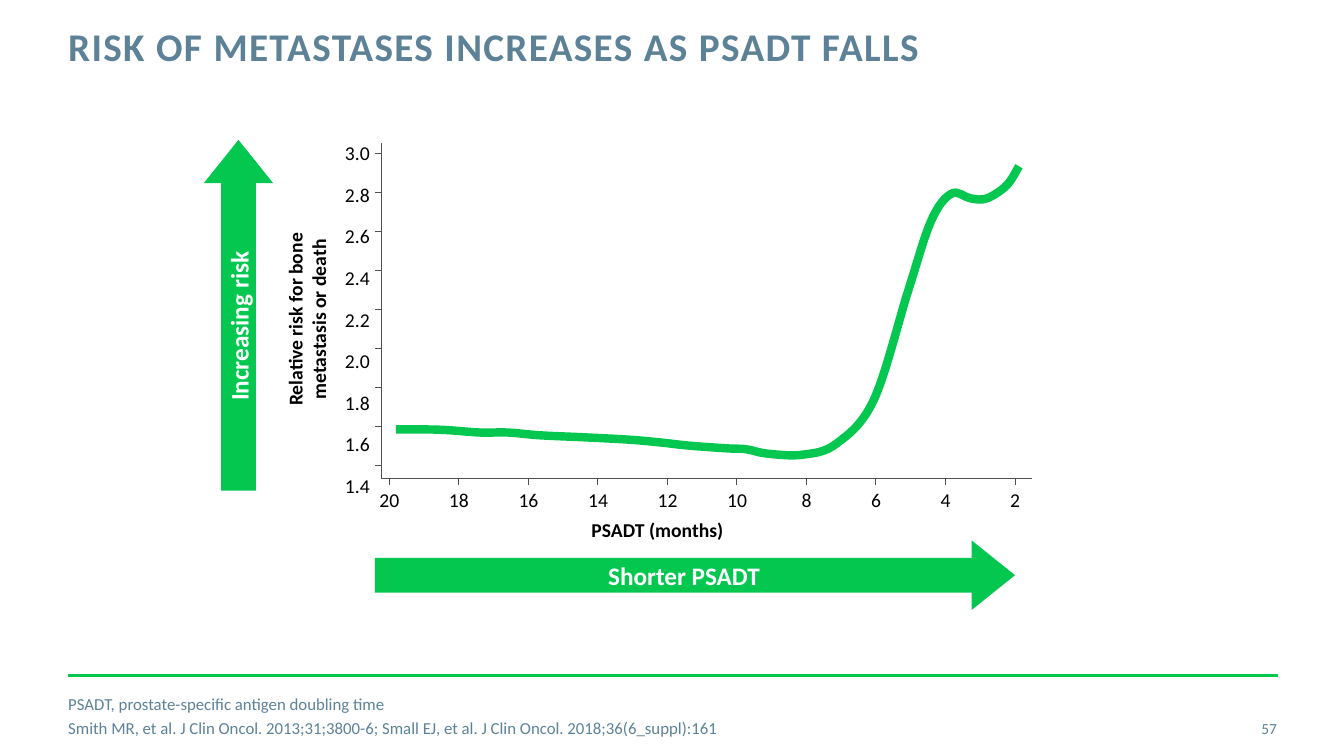
from dataclasses import dataclass

import pptx
import pptx.dml.color
import pptx.enum.shapes
import pptx.enum.text
import pptx.oxml
import pptx.oxml.ns
import pptx.shapes.autoshape
import pptx.shapes.shapetree
import pptx.util
from pptx.util import Cm

RGBColor = pptx.dml.color.RGBColor
Align = pptx.enum.text.PP_ALIGN
Anchor = pptx.enum.text.MSO_ANCHOR
Shapes = pptx.shapes.shapetree.SlideShapes | pptx.shapes.shapetree.GroupShapes
Point = tuple[float, float]

GREEN = RGBColor(0x03, 0xC7, 0x4F)
SLATE = RGBColor(0x5D, 0x82, 0x98)
AXIS_GREY = RGBColor(0x50, 0x50, 0x50)
BLACK = RGBColor(0, 0, 0)
WHITE = RGBColor(255, 255, 255)
FONT = "Calibri"

AXIS_LEFT, AXIS_RIGHT = 9.61, 26.01
AXIS_TOP, AXIS_BOTTOM = 3.61, 12.06
TICK_LENGTH = 0.16

RISK_CURVE = [
    (9.98, 10.82), (11.1, 10.83), (12.09, 10.9), (12.8, 10.9), (13.61, 10.97),
    (14.71, 11.02), (15.85, 11.08), (16.64, 11.15), (17.37, 11.23), (18.34, 11.3),
    (18.8, 11.32), (19.33, 11.43), (20.22, 11.46), (21.08, 11.18), (22.02, 10.08),
    (22.89, 7.32), (23.47, 5.56), (23.98, 4.88), (24.46, 5.0), (24.87, 5.0),
    (25.37, 4.67), (25.68, 4.19),
]


@dataclass(frozen=True)
class Frame:
    """Position and size in centimetres."""
    left: float
    top: float
    width: float
    height: float
    rotation: float = 0


@dataclass(frozen=True)
class Arrow:
    text: str
    frame: Frame


ARROWS = [
    Arrow("Shorter PSADT", Frame(9.45, 13.62, 16.13, 1.75)),
    Arrow("Increasing risk", Frame(1.59, 7.07, 8.84, 1.75, 270)),
]


def write(shape: pptx.shapes.autoshape.Shape, text: str, *, size: float = 14,
          color: RGBColor = BLACK, bold: bool = False, align: Align = Align.LEFT,
          anchor: Anchor = Anchor.TOP, wrap: bool = True,
          insets: Point = (0, 0), gap: float = 0,
          line_spacing: float | None = None, tracking: float = 0) -> None:
    """Fill a shape with one paragraph per line; insets are (side, top and bottom) in cm."""
    frame = shape.text_frame
    frame.word_wrap = wrap
    frame.vertical_anchor = anchor
    frame.margin_left = frame.margin_right = Cm(insets[0])
    frame.margin_top = frame.margin_bottom = Cm(insets[1])
    for index, line in enumerate(text.split("\n")):
        para = frame.add_paragraph() if index else frame.paragraphs[0]
        para.alignment = align
        if index and gap:
            para.space_before = pptx.util.Pt(gap)
        if line_spacing:
            para.line_spacing = pptx.util.Pt(line_spacing)
        span = para.add_run()
        span.text = line
        span.font.name = FONT
        span.font.size = pptx.util.Pt(size)
        span.font.bold = bold
        span.font.color.rgb = color
        if tracking:
            span.font._element.set("spc", str(round(tracking * 100)))


def add_text(shapes: Shapes, text: str, frame: Frame, **style) -> None:
    box = shapes.add_textbox(Cm(frame.left), Cm(frame.top), Cm(frame.width), Cm(frame.height))
    box.rotation = frame.rotation
    write(box, text, **style)


def add_line(shapes: Shapes, start: Point, end: Point,
             color: RGBColor = AXIS_GREY, width: float = 0.75) -> None:
    line = shapes.add_connector(pptx.enum.shapes.MSO_CONNECTOR.STRAIGHT,
                                Cm(start[0]), Cm(start[1]), Cm(end[0]), Cm(end[1]))
    line.line.color.rgb = color
    line.line.width = pptx.util.Pt(width)
    line._element.spPr.append(pptx.oxml.parse_xml(
        f"<a:effectLst {pptx.oxml.ns.nsdecls('a')}/>"))


def add_arrow(shapes: Shapes, arrow: Arrow) -> None:
    frame = arrow.frame
    shape = shapes.add_shape(pptx.enum.shapes.MSO_SHAPE.RIGHT_ARROW, Cm(frame.left),
                             Cm(frame.top), Cm(frame.width), Cm(frame.height))
    shape.adjustments[0] = 0.5
    shape.adjustments[1] = 0.623
    shape.rotation = frame.rotation
    shape.shadow.inherit = False
    shape.fill.solid()
    shape.fill.fore_color.rgb = GREEN
    shape.line.fill.background()
    write(shape, arrow.text, size=18, color=WHITE, bold=True, align=Align.CENTER,
          anchor=Anchor.MIDDLE, insets=(0.25, 0.13))


def round_segments(curve: pptx.shapes.autoshape.Shape, points: list[Point]) -> None:
    """Turn the straight segments of a freeform into Bézier curves through the same points."""
    padded = [points[0], *points, points[-1]]
    segments = curve._element.findall(".//" + pptx.oxml.ns.qn("a:lnTo"))
    neighbours = zip(padded, padded[1:], padded[2:], padded[3:])
    for segment, (before, start, end, after) in zip(segments, neighbours):
        leaving = [b + (c - a) / 6 for a, b, c in zip(before, start, end)]
        arriving = [c - (d - b) / 6 for b, c, d in zip(start, end, after)]
        knots = "".join(
            f'<a:pt x="{Cm(x) - curve.left}" y="{Cm(y) - curve.top}"/>'
            for x, y in (leaving, arriving, end))
        segment.getparent().replace(segment, pptx.oxml.parse_xml(
            f"<a:cubicBezTo {pptx.oxml.ns.nsdecls('a')}>{knots}</a:cubicBezTo>"))


def add_risk_curve(shapes: Shapes) -> None:
    start, *rest = [(Cm(x), Cm(y)) for x, y in RISK_CURVE]
    builder = shapes.build_freeform(*start)
    builder.add_line_segments(rest, close=False)
    curve = builder.convert_to_shape()
    round_segments(curve, RISK_CURVE)
    curve.shadow.inherit = False
    curve.fill.background()
    curve.line.color.rgb = GREEN
    curve.line.width = pptx.util.Pt(6)


def add_axis_labels(shapes: Shapes) -> None:
    add_text(shapes, "Relative risk for bone metastasis or death",
             Frame(4.67, 7.39, 6.25, 1.32, 270), bold=True, align=Align.CENTER,
             insets=(0.25, 0))
    add_text(shapes, "PSADT (months)", Frame(14.07, 13.06, 5, 0.61), bold=True,
             align=Align.CENTER, insets=(0.25, 0))
    for index in range(9):
        add_text(shapes, f"{3 - 0.2 * index:.1f}",
                 Frame(8.2, 3.43 + 8.38 / 8 * index, 1.12, 0.86),
                 align=Align.RIGHT, insets=(0, 0.13))


def add_plot(shapes: Shapes) -> None:
    corner = (AXIS_LEFT, AXIS_BOTTOM)
    add_line(shapes, corner, (AXIS_LEFT, AXIS_TOP))
    add_line(shapes, corner, (AXIS_RIGHT, AXIS_BOTTOM))
    for index in range(9):
        tick = 3.88 + 7.85 / 8 * index
        add_line(shapes, (AXIS_LEFT - TICK_LENGTH, tick), (AXIS_LEFT, tick))
    for index in range(10):
        tick = 9.81 + 15.77 / 9 * index
        add_line(shapes, (tick, AXIS_BOTTOM + TICK_LENGTH), (tick, AXIS_BOTTOM))
        add_text(shapes, str(20 - 2 * index), Frame(tick - 0.25, 12.17, 0.51, 0.81),
                 align=Align.CENTER, wrap=False, insets=(0, 0.13))
    add_risk_curve(shapes)


def main() -> None:
    deck = pptx.Presentation()
    deck.slide_width, deck.slide_height = Cm(33.87), Cm(19.05)
    page = deck.slides.add_slide(deck.slide_layouts[6])
    shapes = page.shapes

    add_line(shapes, (1.72, 17.02), (32.21, 17.02), GREEN, 2)
    add_text(shapes, "RISK OF METASTASES INCREASES AS PSADT FALLS",
             Frame(1.72, 0.69, 24.33, 2.24), size=28, color=SLATE, bold=True,
             line_spacing=30, tracking=1)
    add_text(shapes, "PSADT, prostate-specific antigen doubling time\n"
             "Smith MR, et al. J Clin Oncol. 2013;31;3800-6; "
             "Small EJ, et al. J Clin Oncol. 2018;36(6_suppl):161",
             Frame(1.72, 17.53, 22.56, 1.02), size=12, color=SLATE,
             anchor=Anchor.MIDDLE, gap=3)
    add_text(shapes, "57", Frame(30, 17.85, 2.18, 1.02), size=11, color=SLATE,
             align=Align.RIGHT, anchor=Anchor.MIDDLE)
    add_axis_labels(shapes)
    for arrow in ARROWS:
        add_arrow(shapes, arrow)
    add_plot(shapes.add_group_shape().shapes)
    deck.save("out.pptx")


if __name__ == "__main__":
    main()
